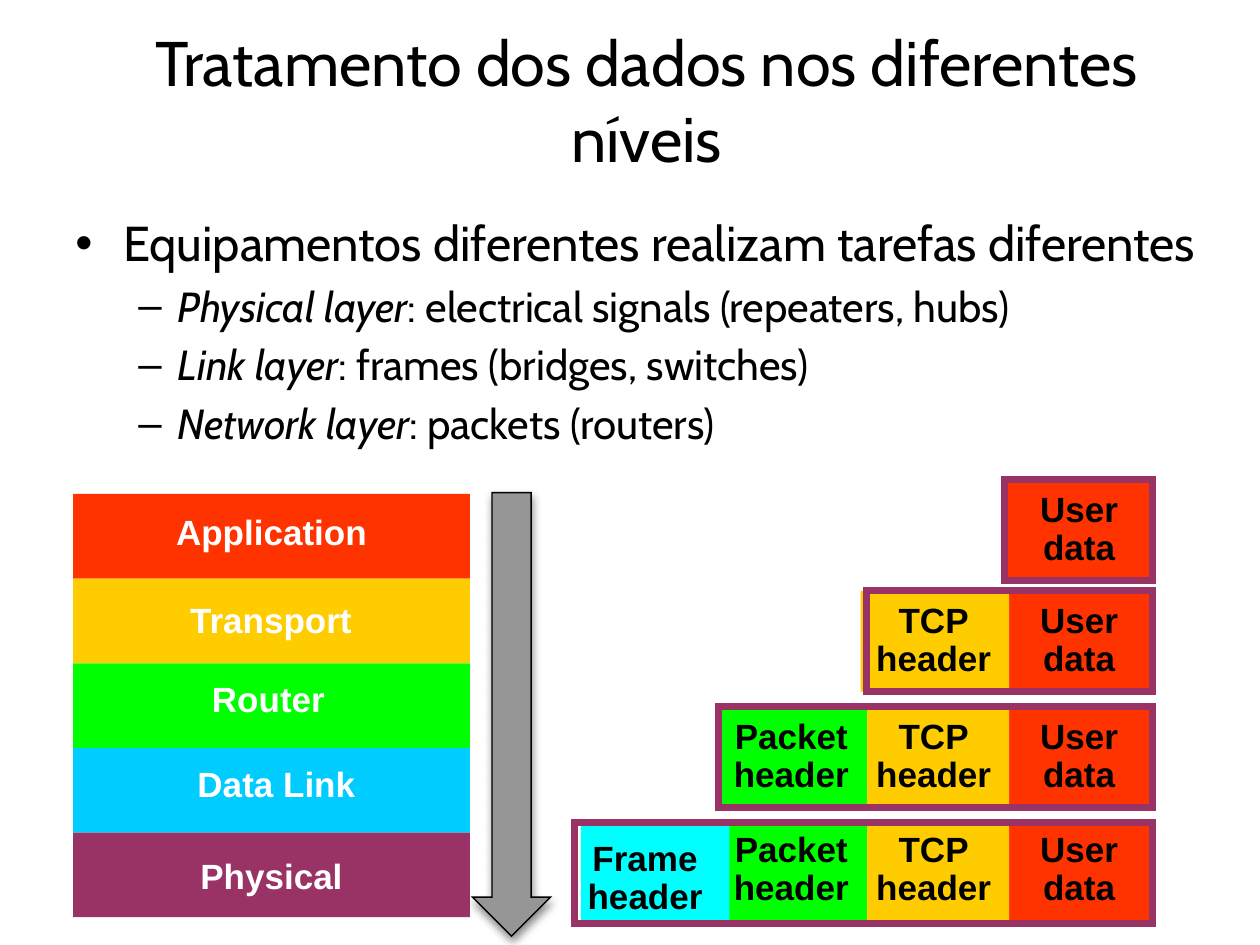
from dataclasses import dataclass

from lxml import etree
from pptx import Presentation
from pptx import util as u
from pptx.dml.color import RGBColor
from pptx.enum import shapes, text
from pptx.oxml.ns import qn


@dataclass(frozen=True)
class Theme:
    body_font: str = "Cabin"
    label_font: str = "Arial"
    title_size: int = 36
    bullet_size: int = 28
    sub_bullet_size: int = 24
    label_size: int = 20
    black: str = "000000"
    white: str = "FFFFFF"
    red: str = "FF3300"
    yellow: str = "FFCC00"
    green: str = "00FF00"
    blue: str = "00CCFF"
    cyan: str = "00FFFF"
    purple: str = "993366"
    gray: str = "969696"


THEME = Theme()

# Layer name, fill, label left, label top, label width
LAYERS = [
    ("Application", THEME.red, 1.28, 4.0, 1.75),
    ("Transport", THEME.yellow, 1.39, 4.7, 1.52),
    ("Router", THEME.green, 1.57, 5.33, 1.12),
    (" Data Link", THEME.blue, 1.38, 6.0, 1.55),
    ("Physical", THEME.purple, 1.48, 6.73, 1.35),
]

# Text (\n: new paragraph, \v: line break), fill, cell left,
# cell drop, label left, label drop, label width
DATA_CELLS = [
    ("User\ndata", THEME.red, 7.97, 0, 8.15, 0.05, 0.83),
    ("TCP\vheader", THEME.yellow, 6.83, 0, 6.85, 0.05, 1.12),
    ("Packet\vheader", THEME.green, 5.7, 0, 5.72, 0.05, 1.12),
    ("Frame\vheader", THEME.cyan, 4.61, 0.04, 4.56, 0.12, 1.12),
]

# Row top, outline left, outline drop; each row holds one more cell
DATA_ROWS = [
    (3.81, 7.97, 0),
    (4.69, 6.88, 0),
    (5.61, 5.7, 0),
    (6.51, 4.56, 0.02),
]
CELL_WIDTH, CELL_HEIGHT = 1.18, 0.8
ROW_RIGHT = 9.15

BULLETS = [
    ("Physical layer", ": electrical signals (repeaters, hubs)"),
    ("Link layer", ": frames (bridges, switches)"),
    ("Network layer", ": packets (routers)"),
]


def add_run(paragraph, words, size, font, color, bold=False, italic=False):
    run = paragraph.add_run()
    run.text = words
    run.font.size = u.Pt(size)
    run.font.name = font
    run.font.color.rgb = RGBColor.from_string(color)
    run.font.bold = bold
    run.font.italic = italic


def add_box(parent, left, top, width, height, fill=None, line=None,
            line_width=4, kind=shapes.MSO_SHAPE.RECTANGLE):
    shape = parent.add_shape(kind, *map(u.Inches, (left, top, width, height)))
    shape.shadow.inherit = False
    if fill:
        shape.fill.solid()
        shape.fill.fore_color.rgb = RGBColor.from_string(fill)
    else:
        shape.fill.background()
    if line:
        shape.line.color.rgb = RGBColor.from_string(line)
        shape.line.width = u.Pt(line_width)
        outline = shape._element.spPr.find(qn("a:ln"))
        etree.SubElement(outline, qn("a:miter")).set("lim", "800000")
    else:
        shape.line.fill.background()
    return shape


def add_text_frame(parent, left, top, width, height, wrap=True):
    box = parent.add_textbox(*map(u.Inches, (left, top, width, height)))
    box.text_frame.word_wrap = wrap
    return box.text_frame


def add_label(parent, words, left, top, width, height, color, spacing=None):
    frame = add_text_frame(parent, left, top, width, height, wrap=False)
    frame.auto_size = text.MSO_AUTO_SIZE.SHAPE_TO_FIT_TEXT
    for index, content in enumerate(words.split("\n")):
        paragraph = frame.add_paragraph() if index else frame.paragraphs[0]
        paragraph.alignment = text.PP_ALIGN.CENTER
        if spacing:
            paragraph.line_spacing = spacing
        for number, line in enumerate(content.split("\v")):
            if number:
                paragraph.add_line_break()
            add_run(paragraph, line, THEME.label_size, THEME.label_font,
                    color, bold=True)


def set_bullet(paragraph, symbol, margin, indent, size):
    paragraph.space_before = u.Pt(0.2 * size)
    properties = paragraph._p.get_or_add_pPr()
    properties.set("marL", str(u.Inches(margin)))
    properties.set("indent", str(u.Inches(indent)))
    font = etree.SubElement(properties, qn("a:buFont"))
    font.set("typeface", "Arial")
    etree.SubElement(properties, qn("a:buChar")).set("char", symbol)


def add_shadow(shape):
    effects = shape._element.spPr.find(qn("a:effectLst"))
    shadow = etree.SubElement(effects, qn("a:outerShdw"))
    for name, value in (("blurRad", u.Pt(5)), ("dist", u.Pt(2.4)),
                        ("dir", 90 * 60000), ("rotWithShape", 0)):
        shadow.set(name, str(value))
    color = etree.SubElement(shadow, qn("a:srgbClr"))
    color.set("val", THEME.black)
    etree.SubElement(color, qn("a:alpha")).set("val", "45000")


def add_title(slide):
    frame = add_text_frame(slide.shapes, 0.67, 0.25, 8.92, 1.08)
    frame.vertical_anchor = text.MSO_ANCHOR.MIDDLE
    paragraph = frame.paragraphs[0]
    paragraph.alignment = text.PP_ALIGN.CENTER
    add_run(paragraph, "Tratamento dos dados nos diferentes níveis",
            THEME.title_size, THEME.body_font, THEME.black)


def add_bullets(slide):
    frame = add_text_frame(slide.shapes, 0.5, 1.64, 9.15, 2)
    paragraph = frame.paragraphs[0]
    set_bullet(paragraph, "•", 0.38, -0.38, THEME.bullet_size)
    add_run(paragraph, "Equipamentos diferentes realizam tarefas diferentes",
            THEME.bullet_size, THEME.body_font, THEME.black)
    for layer, description in BULLETS:
        paragraph = frame.add_paragraph()
        paragraph.level = 1
        set_bullet(paragraph, "–", 0.81, -0.31, THEME.sub_bullet_size)
        for words, italic in ((layer, True), (description, False)):
            add_run(paragraph, words, THEME.sub_bullet_size, THEME.body_font,
                    THEME.black, italic=italic)


def add_layer_stack(slide):
    left, top, width, height = 0.58, 3.92, 3.15, 3.36 / len(LAYERS)
    for index, (_, fill, *_) in enumerate(LAYERS):
        add_box(slide.shapes, left, top + index * height, width, height, fill)
    for name, _, label_left, label_top, label_width in LAYERS:
        add_label(slide.shapes, name, label_left, label_top, label_width,
                  0.43, THEME.white)


def add_data_row(slide, cells, top, outline_left, outline_drop):
    group = slide.shapes.add_group_shape().shapes
    for words, fill, left, drop, label_left, label_drop, label_width in cells:
        add_box(group, left, top + drop, CELL_WIDTH, CELL_HEIGHT, fill)
        add_label(group, words, label_left, top + label_drop, label_width,
                  0.7, THEME.black, spacing=0.9)
    add_box(group, outline_left, top + outline_drop, ROW_RIGHT - outline_left,
            CELL_HEIGHT, line=THEME.purple)


def main():
    presentation = Presentation()
    presentation.slide_width = u.Inches(10)
    presentation.slide_height = u.Inches(7.5)
    slide = presentation.slides.add_slide(presentation.slide_layouts[6])

    # Heading and bullets
    add_title(slide)
    add_bullets(slide)

    # Protocol layers
    add_layer_stack(slide)

    # Encapsulated data, one more header per row
    for count, row in enumerate(DATA_ROWS, start=1):
        add_data_row(slide, DATA_CELLS[:count], *row)

    # Direction of travel through the layers
    arrow = add_box(slide.shapes, 3.75, 3.91, 0.62, 3.52, THEME.gray,
                    THEME.black, 0.79, shapes.MSO_SHAPE.DOWN_ARROW)
    add_shadow(arrow)

    presentation.save("out.pptx")


if __name__ == "__main__":
    main()
